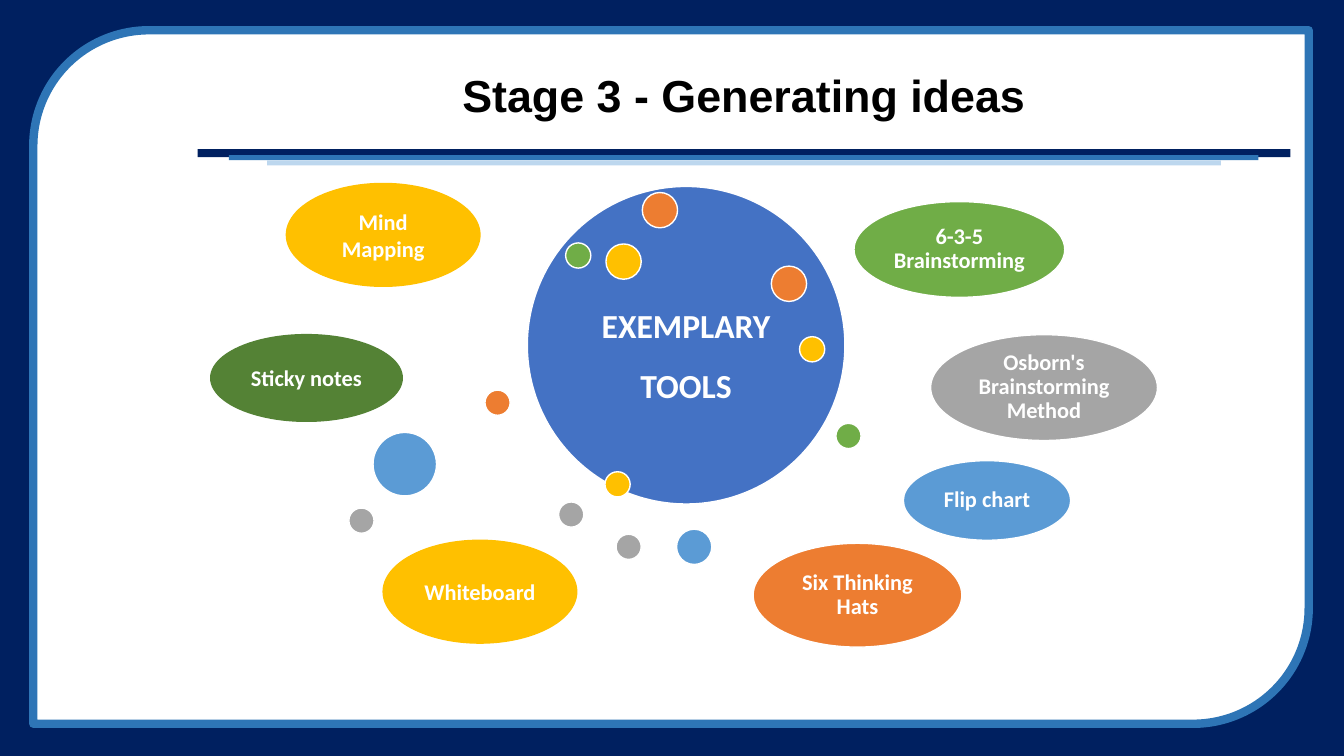
"""Build the slide on tools for generating ideas."""
from dataclasses import dataclass

import pptx
import pptx.dml.color
import pptx.enum.shapes
import pptx.enum.text
import pptx.util
from pptx.util import Inches

SHAPE = pptx.enum.shapes.MSO_SHAPE
NAVY, BLUE, PALE_BLUE = "002060", "2E75B6", "BDD7EE"
WHITE, BLACK = "FFFFFF", "000000"
ROYAL, SKY, ORANGE, GRAY = "4472C4", "5B9BD5", "ED7D31", "A5A5A5"
GOLD, GREEN, DARK_GREEN = "FFC000", "70AD47", "548235"
SMALL, MEDIUM, LARGE = 0.25, 0.35, 0.63


@dataclass
class Area:
    left: float
    top: float
    width: float
    height: float


@dataclass
class Dot:
    left: float
    top: float
    size: float
    color: str


@dataclass
class Bubble:
    text: str
    area: Area
    color: str
    outline: str = WHITE
    size: int = 16
    spacing: float = 0.9
    inset: float = 0.07


BARS = [
    (Area(1.96, 1.48, 10.84, 0.08), NAVY),
    (Area(2.27, 1.54, 10.21, 0.05), BLUE),
    (Area(2.65, 1.59, 9.46, 0.05), PALE_BLUE),
]
CENTER = Bubble("EXEMPLARY TOOLS", Area(5.23, 1.85, 3.15, 3.15), ROYAL,
                size=24, spacing=1.5, inset=0.1)
DOTS = [
    Dot(6.37, 1.91, MEDIUM, ORANGE),
    Dot(5.54, 4.98, SMALL, GRAY),
    Dot(7.93, 3.34, SMALL, GOLD),
    Dot(6.71, 5.25, MEDIUM, SKY),
    Dot(5.61, 2.41, SMALL, GREEN),
    Dot(4.81, 3.87, SMALL, ORANGE),
    Dot(6.01, 2.42, MEDIUM, GOLD),
    Dot(3.7, 4.29, LARGE, SKY),
    Dot(7.65, 2.64, MEDIUM, ORANGE),
    Dot(3.46, 5.04, SMALL, GRAY),
    Dot(6, 4.68, SMALL, GOLD),
    Dot(8.29, 4.2, SMALL, GREEN),
    Dot(6.11, 5.3, SMALL, GRAY),
]
TOOLS = [
    Bubble("Osborn's Brainstorming Method", Area(9.23, 3.32, 2.25, 1.05), GRAY),
    Bubble("6-3-5 Brainstorming", Area(8.47, 2, 2.09, 0.95), GREEN),
    Bubble("Flip chart", Area(8.96, 4.57, 1.66, 0.79), SKY),
    Bubble("Six Thinking Hats", Area(7.47, 5.39, 2.07, 1.03), ORANGE),
    Bubble("Sticky notes", Area(2.09, 3.32, 1.9, 0.86), DARK_GREEN, DARK_GREEN,
           spacing=1, inset=0.1),
    Bubble("Whiteboard", Area(3.8, 5.36, 1.92, 1.02), GOLD, GOLD,
           spacing=1, inset=0.1),
    Bubble("Mind Mapping", Area(2.84, 1.82, 1.92, 1.02), GOLD, GOLD,
           spacing=1, inset=0.1),
]


def rgb(color: str) -> pptx.dml.color.RGBColor:
    return pptx.dml.color.RGBColor.from_string(color)


def lengths(area: Area) -> list[pptx.util.Length]:
    return [Inches(n) for n in (area.left, area.top, area.width, area.height)]


def add_form(page, kind: SHAPE, area: Area, color: str,
             outline: str | None = None, weight: float = 1):
    form = page.shapes.add_shape(kind, *lengths(area))
    form.shadow.inherit = False
    form.fill.solid()
    form.fill.fore_color.rgb = rgb(color)
    if outline:
        form.line.color.rgb = rgb(outline)
        form.line.width = pptx.util.Pt(weight)
    else:
        form.line.fill.background()
    return form


def write(box, text: str, font: str, size: int, color: str,
          spacing: float, inset: float) -> None:
    frame = box.text_frame
    frame.word_wrap = True
    frame.vertical_anchor = pptx.enum.text.MSO_ANCHOR.MIDDLE
    frame.margin_left = frame.margin_right = Inches(inset)
    frame.margin_top = frame.margin_bottom = Inches(min(inset, 0.07))
    para = frame.paragraphs[0]
    para.text = text
    para.alignment = pptx.enum.text.PP_ALIGN.CENTER
    para.line_spacing = spacing
    para.font.name = font
    para.font.size = pptx.util.Pt(size)
    para.font.bold = True
    para.font.color.rgb = rgb(color)


def add_bubble(page, bubble: Bubble) -> None:
    oval = add_form(page, SHAPE.OVAL, bubble.area, bubble.color, bubble.outline)
    write(oval, bubble.text, "Calibri", bubble.size, WHITE,
          bubble.spacing, bubble.inset)


def add_dot(page, dot: Dot) -> None:
    area = Area(dot.left, dot.top, dot.size, dot.size)
    add_form(page, SHAPE.OVAL, area, dot.color, WHITE)


def main() -> None:
    deck = pptx.Presentation()
    deck.slide_width, deck.slide_height = Inches(13.33), Inches(7.5)
    page = deck.slides.add_slide(deck.slide_layouts[6])

    add_form(page, SHAPE.RECTANGLE, Area(0, 0, 13.33, 7.5), NAVY)
    panel = add_form(page, SHAPE.ROUND_2_DIAG_RECTANGLE,
                     Area(0.33, 0.3, 12.65, 6.88), WHITE, BLUE, 6)
    panel.rotation = 180
    for area, color in BARS:
        add_form(page, SHAPE.RECTANGLE, area, color)
    title = page.shapes.add_textbox(*lengths(Area(1.96, 0.49, 10.84, 0.97)))
    write(title, "Stage 3 - Generating ideas", "Arial", 32, BLACK, 0.9, 0.1)

    add_bubble(page, CENTER)
    for dot in DOTS:
        add_dot(page, dot)
    for tool in TOOLS:
        add_bubble(page, tool)
    deck.save("out.pptx")


if __name__ == "__main__":
    main()
